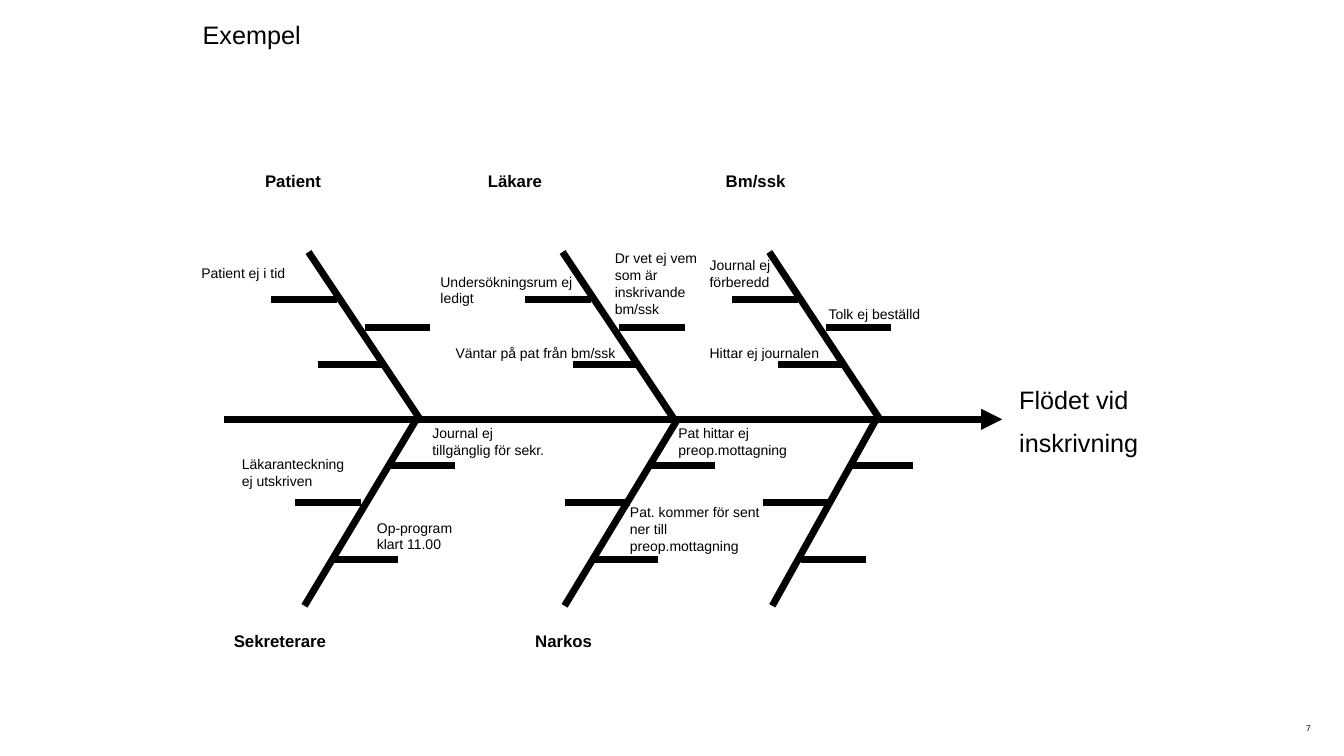
from dataclasses import dataclass
from lxml import etree
from pptx import Presentation
from pptx import util as u
from pptx.dml.color import RGBColor
from pptx.enum import shapes, text
from pptx.oxml.ns import qn


@dataclass(frozen=True)
class Theme:
    font: str = "Arial"
    ink: RGBColor = RGBColor(0, 0, 0)
    paper: RGBColor = RGBColor(255, 255, 255)
    big: int = 18
    head: int = 12
    note: int = 10
    tiny: int = 6
    line: int = 5


THEME = Theme()
COLS, ROWS = 133.3, 75
CELL = u.Inches(0.1)
SPINE = 41.6
RIB = 6.5
TOP = (25, 41.8)
LOW = (60.1, SPINE)
TOP_RIBS = (29.7, 36.2, 32.5)
LOW_RIBS = (49.9, 55.5, 46.2)

BONES = [
    (TOP, (30.6, 41.8), TOP_RIBS, (26.9, 31.5, 36.2)),
    (TOP, (55.8, 67), TOP_RIBS, (52.1, 56.8, 61.4)),
    (TOP, (76.3, 87.4), TOP_RIBS, (72.6, 77.2, 81.9)),
    (LOW, (30.2, 41.3), LOW_RIBS, (29.3, 33, 38.6)),
    (LOW, (56, 67.2), LOW_RIBS, (56, 58.8, 64.4)),
    (LOW, (76.6, 86.9), LOW_RIBS, (75.7, 79.4, 84.1)),
]

HEADS = [
    ("Patient", 25.3, 16.4, 18.9),
    ("Läkare", 47.4, 16.4, 15.7),
    ("Bm/ssk", 71, 16.4, 17.3),
    ("Sekreterare", 22.2, 62.1, 18.9),
    ("Narkos", 52.1, 62.1, 18.1),
]

NOTES = [
    ("Patient ej i tid", 19, 25.8, 13.4, 2.7),
    ("Läkaranteckning ej utskriven", 23, 44.7, 12.6, 4.3),
    ("Journal ej tillgänglig för sekr.", 41.9, 41.6, 13.4, 4.3),
    ("Op-program klart 11.00", 36.4, 51, 11, 4.3),
    ("Undersökningsrum ej ledigt", 42.7, 26.6, 15.7, 4.3),
    ("Väntar på pat från bm/ssk", 44.2, 33.7, 18.9, 2.7),
    ("Dr vet ej vem som är inskrivande bm/ssk", 60, 24.3, 12.6, 7.7),
    ("Journal ej förberedd", 69.4, 25, 12.6, 4.3),
    ("Hittar ej journalen", 69.4, 33.7, 15.8, 2.7),
    ("Tolk ej beställd", 81.2, 29.8, 18.9, 2.7),
    ("Pat hittar ej preop.mottagning", 66.3, 41.6, 15, 4.3),
    ("Pat. kommer för sent ner till preop.mottagning", 61.5, 49.5, 15, 6),
]


def grid(*cells):
    return [round(c * CELL) for c in cells]


def write(frame, lines, size, bold=False, align=text.PP_ALIGN.LEFT):
    frame.word_wrap = True
    frame.vertical_anchor = text.MSO_ANCHOR.TOP
    for i, line in enumerate(lines):
        para = frame.add_paragraph() if i else frame.paragraphs[0]
        para.alignment = align
        para.space_before = u.Pt(size / 2 if i else 0)
        run = para.add_run()
        run.text = line
        run.font.name = THEME.font
        run.font.size = u.Pt(size)
        run.font.bold = bold
        run.font.color.rgb = THEME.ink
    frame.auto_size = text.MSO_AUTO_SIZE.SHAPE_TO_FIT_TEXT


def label(slide, place, lines, size, **style):
    box = slide.shapes.add_textbox(*grid(*place))
    write(box.text_frame, lines, size, **style)
    return box


def title(slide, place, words):
    box = slide.shapes.title
    box.left, box.top, box.width, box.height = grid(*place)
    write(box.text_frame, [words], THEME.big)


def stroke(owner, start, end, arrow=False):
    line = owner.shapes.add_connector(
        shapes.MSO_CONNECTOR.STRAIGHT, *grid(*start, *end))
    line.line.color.rgb = THEME.ink
    line.line.width = u.Pt(THEME.line)
    props = line._element.spPr
    if arrow:
        etree.SubElement(props.find(qn("a:ln")), qn("a:tailEnd"), type="triangle")
    etree.SubElement(props, qn("a:effectLst"))


def bone(slide, span, ends, rows, lefts):
    group = slide.shapes.add_group_shape()
    stroke(group, (ends[0], span[0]), (ends[1], span[1]))
    for left, row in zip(lefts, rows):
        stroke(group, (left + RIB, row), (left, row))


def main():
    deck = Presentation()
    deck.slide_width, deck.slide_height = grid(COLS, ROWS)
    slide = deck.slides.add_slide(deck.slide_layouts[5])
    slide.background.fill.solid()
    slide.background.fill.fore_color.rgb = THEME.paper

    title(slide, (19.1, 1.4, 16.9, 4), "Exempel")
    stroke(slide, (22.2, SPINE), (99.4, SPINE), arrow=True)
    for part in BONES:
        bone(slide, *part)
    label(slide, (100.1, 37.6, 16.9, 8.5), ["Flödet vid", "inskrivning"], THEME.big)
    for words, left, top, width in HEADS:
        label(slide, (left, top, width, 3), [words], THEME.head, bold=True)
    for words, *place in NOTES:
        label(slide, place, [words], THEME.note)

    page = label(slide, (123.3, 71.7, 6.7, 1), ["7"], THEME.tiny,
                 align=text.PP_ALIGN.RIGHT).text_frame
    page.margin_left = page.margin_right = page.margin_top = page.margin_bottom = 0
    deck.save("out.pptx")


if __name__ == "__main__":
    main()
